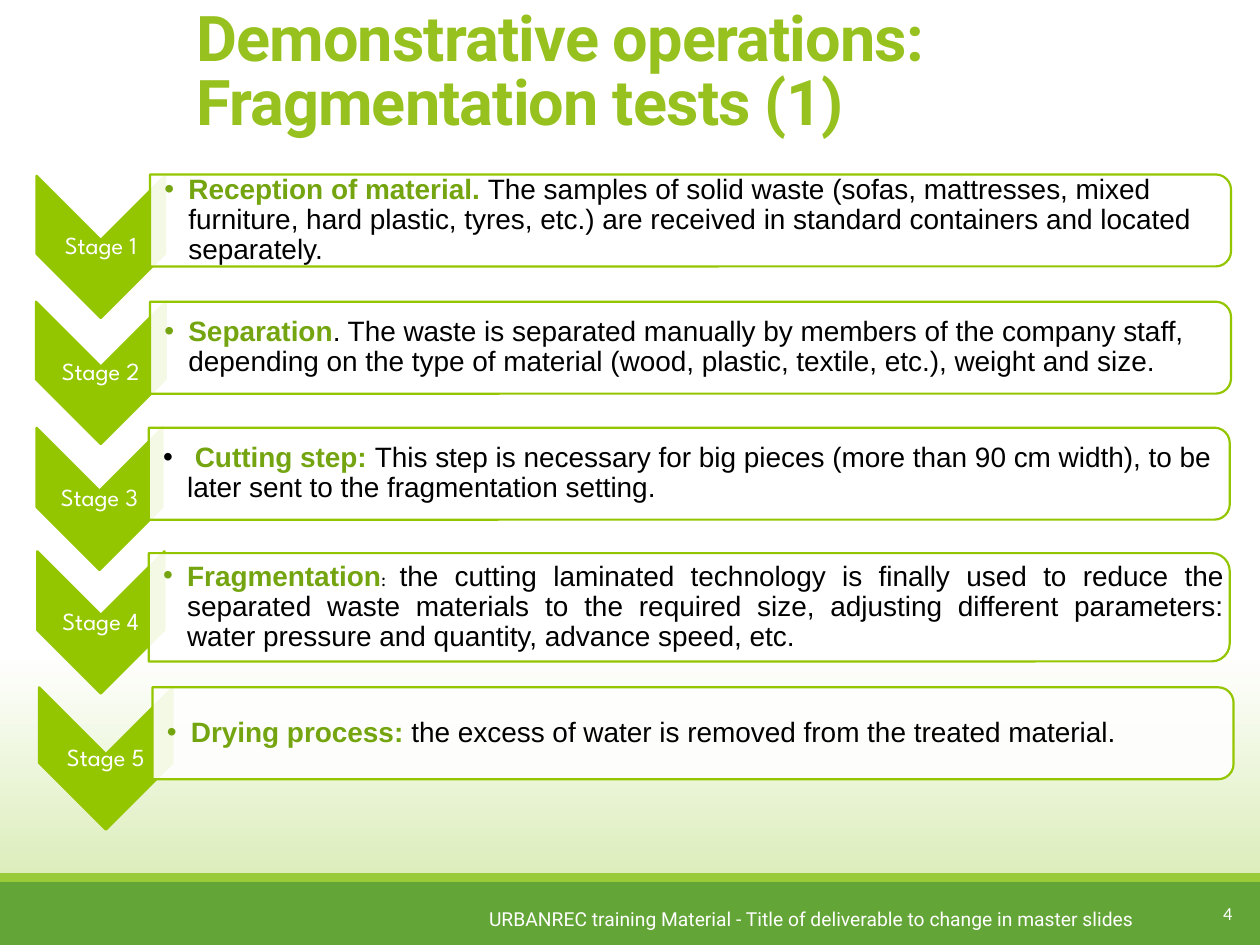
"""Build the slide listing the five stages of the fragmentation tests."""
from lxml.etree import SubElement
from pptx import Presentation
from pptx.dml.color import RGBColor
from pptx.enum.shapes import MSO_SHAPE
from pptx.enum.text import MSO_ANCHOR, PP_ALIGN
from pptx.oxml.ns import qn
from pptx.util import Inches, Pt

WIDTH, HEIGHT = 10, 7.5
COLORS = {
    "white": "FFFFFF", "black": "000000", "title": "96C11E", "stage": "94C600",
    "heading": "74A510", "footer": "63A537", "stripe": "99CB38", "glow": "D1E8A5",
}
STYLES = {
    "title": ("Roboto", 36, "title", True),
    "footer": ("Roboto", 11, "white", False),
    "number": ("Calibri", 10.5, "white", False),
    "label": ("League Spartan", 14, "white", False),
    "heading": ("Arial", 16, "heading", True),
    "body": ("Arial", 16, "black", False),
    "colon": ("League Spartan", 11, "black", False),
}
TITLE = "Demonstrative operations: Fragmentation tests (1)"
FOOTER = "URBANREC training Material - Title of deliverable to change in master slides"
PAGE = "4"
STAGES = [
    {"runs": [("Reception of material. ", "heading"),
              ("The samples of solid waste (sofas, mattresses, mixed furniture, hard plastic, "
               "tyres, etc.) are received in standard containers and located separately.", "body")],
     "chevron": (0.8, 1.96, 1.02), "box": (5.48, 1.75, 0.73)},
    {"runs": [("Separation", "heading"),
              (". The waste is separated manually by members of the company staff, depending on "
               "the type of material (wood, plastic, textile, etc.), weight and size.", "body")],
     "chevron": (0.8, 2.96, 1.03), "box": (5.48, 2.76, 0.73)},
    {"runs": [(" ", "body"), ("Cutting step: ", "heading"),
              ("This step is necessary for big pieces (more than 90 cm width), to be later sent "
               "to the fragmentation setting.", "body")],
     "chevron": (0.79, 3.96, 1), "box": (5.47, 3.76, 0.73)},
    {"runs": [("Fragmentation", "heading"), (": ", "colon"),
              ("the cutting laminated technology is finally used to reduce the separated waste "
               "materials to the required size, adjusting different parameters: water pressure "
               "and quantity, advance speed, etc.", "body")],
     "chevron": (0.8, 4.94, 1.01), "box": (5.47, 4.82, 0.86), "align": PP_ALIGN.JUSTIFY},
    {"runs": [("Drying process: ", "heading"),
              ("the excess of water is removed from the treated material.", "body")],
     "chevron": (0.84, 6.02, 1.06), "box": (5.5, 5.82, 0.73)},
]
CHEVRON_LENGTH, BOX_LENGTH = 1.13, 8.58
BAR_TOP, STRIPE = 7, 0.07
INSET, BOX_INSET, INDENT = 0.01, 0.12, 0.19


def color(name):
    return RGBColor.from_string(COLORS[name])


def centered(x, y, width, height):
    return x - width / 2, y - height / 2, width, height


def add_filled(slide, preset, place, fill, line=None, rotation=0):
    shape = slide.shapes.add_shape(preset, *map(Inches, place))
    shape.shadow.inherit = False
    shape.rotation = rotation
    shape.fill.solid()
    shape.fill.fore_color.rgb = color(fill)
    if line:
        shape.line.color.rgb = color(line)
        shape.line.width = Pt(1.25)
    else:
        shape.line.fill.background()
    return shape


def add_text(slide, place, runs, align=PP_ALIGN.LEFT, anchor=MSO_ANCHOR.MIDDLE,
             spacing=0.9, insets=None, bullet=False):
    frame = slide.shapes.add_textbox(*map(Inches, place)).text_frame
    frame.word_wrap = True
    frame.vertical_anchor = anchor
    if insets:
        frame.margin_left, frame.margin_right = map(Inches, insets)
        frame.margin_top = frame.margin_bottom = Inches(INSET)
    paragraph = frame.paragraphs[0]
    paragraph.alignment = align
    paragraph.line_spacing = spacing
    if bullet:
        properties = paragraph._p.get_or_add_pPr()
        properties.set("marL", str(Inches(INDENT)))
        properties.set("indent", str(-Inches(INDENT)))
        SubElement(properties, qn("a:buFont"), typeface="Arial")
        SubElement(properties, qn("a:buChar"), char="•")
    for text, style in runs:
        run = paragraph.add_run()
        run.text = text
        font = run.font
        font.name, size, ink, font.bold = STYLES[style]
        font.size = Pt(size)
        font.color.rgb = color(ink)
    return paragraph


def add_stage(slide, number, stage):
    x, y, breadth = stage["chevron"]
    add_filled(slide, MSO_SHAPE.CHEVRON, centered(x, y, CHEVRON_LENGTH, breadth),
               "stage", "stage", 90)
    add_text(slide, centered(x, y, breadth, 0.1), [(f"Stage {number}", "label")],
             PP_ALIGN.CENTER, insets=(INSET, INSET))
    x, y, height = stage["box"]
    box = add_filled(slide, MSO_SHAPE.ROUND_2_SAME_RECTANGLE,
                     centered(x, y, height, BOX_LENGTH), "white", "stage", 90)
    fill = box.fill._xPr.find(qn("a:solidFill"))
    SubElement(fill[0], qn("a:alpha"), val="90000")
    add_text(slide, centered(x - 0.02, y, BOX_LENGTH - 0.03, height - 0.08), stage["runs"],
             stage.get("align", PP_ALIGN.LEFT), insets=(BOX_INSET, INSET), bullet=True)


def main():
    presentation = Presentation()
    presentation.slide_width, presentation.slide_height = Inches(WIDTH), Inches(HEIGHT)
    slide = presentation.slides.add_slide(presentation.slide_layouts[6])

    background = slide.background.fill
    background.gradient()
    background.gradient_angle = 270
    for stop, (position, name) in zip(background.gradient_stops, [(0.69, "white"), (1, "glow")]):
        stop.position = position
        stop.color.rgb = color(name)

    add_filled(slide, MSO_SHAPE.RECTANGLE, (0, BAR_TOP, WIDTH, HEIGHT - BAR_TOP), "footer")
    add_filled(slide, MSO_SHAPE.RECTANGLE, (0, BAR_TOP - STRIPE, WIDTH, STRIPE), "stripe")
    add_text(slide, (1.28, 7.17, 7.82, 0.44), [(FOOTER, "footer")], PP_ALIGN.RIGHT,
             MSO_ANCHOR.TOP)
    title = add_text(slide, (1.46, 0.02, 8.27, 1.13), [(TITLE, "title")],
                     anchor=MSO_ANCHOR.BOTTOM, spacing=0.85)
    title.runs[0].font._element.set("spc", "-50")
    add_text(slide, (8.8, 7.05, 1.08, 0.4), [(PAGE, "number")], PP_ALIGN.RIGHT, spacing=1.0)

    for number, stage in enumerate(STAGES, 1):
        add_stage(slide, number, stage)
    presentation.save("out.pptx")


if __name__ == "__main__":
    main()
